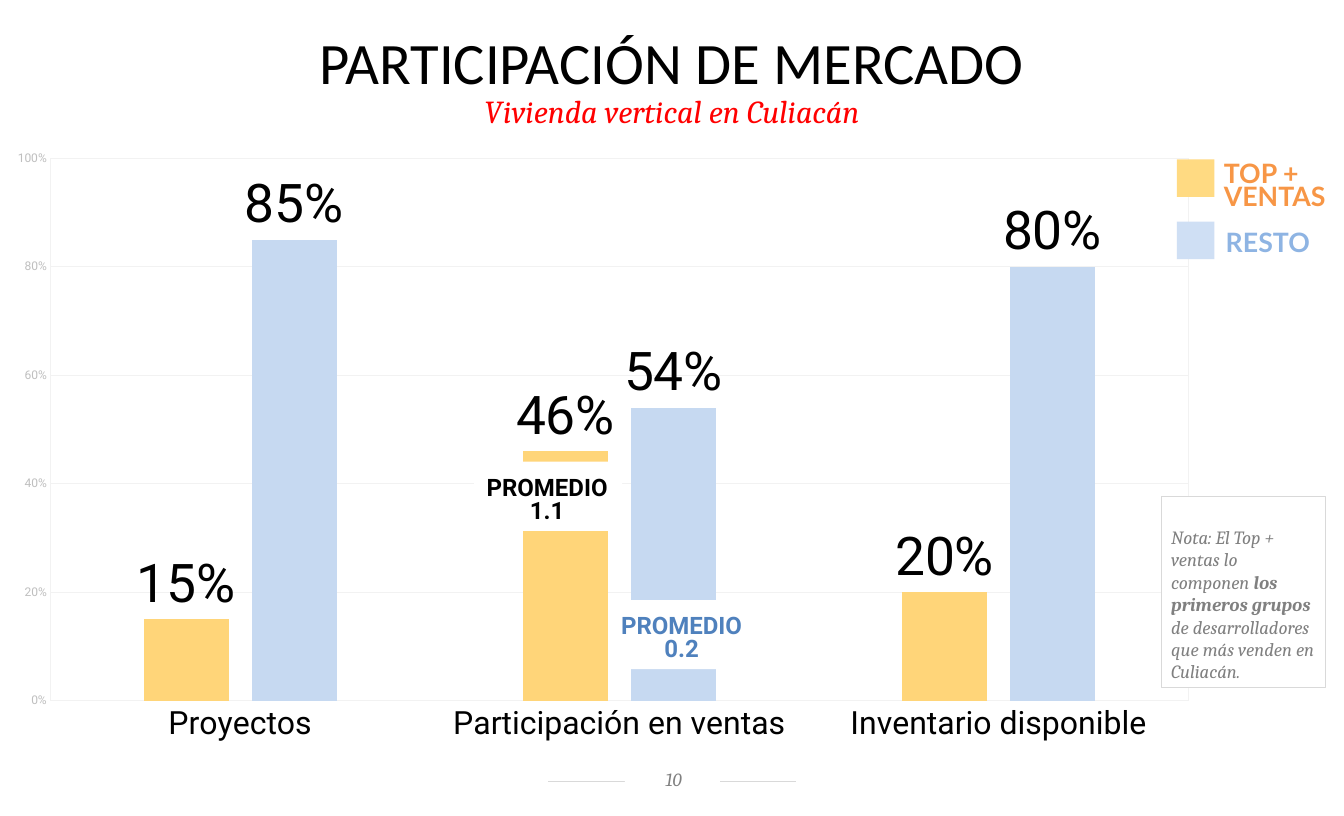
import lxml.etree
import pptx
import pptx.chart.data
import pptx.dml.color
import pptx.enum.chart
import pptx.enum.shapes
import pptx.enum.text
import pptx.oxml.ns
import pptx.util

Inches = pptx.util.Inches
Pt = pptx.util.Pt
RGBColor = pptx.dml.color.RGBColor
Align = pptx.enum.text.PP_ALIGN
Anchor = pptx.enum.text.MSO_ANCHOR
Shapes = pptx.enum.shapes.MSO_SHAPE
qn = pptx.oxml.ns.qn

BLACK = RGBColor(0x00, 0x00, 0x00)
WHITE = RGBColor(0xFF, 0xFF, 0xFF)
RED = RGBColor(0xFF, 0x00, 0x00)
GRAY = RGBColor(0x80, 0x80, 0x80)
AXIS_GRAY = RGBColor(0xBF, 0xBF, 0xBF)
LINE_GRAY = RGBColor(0xD9, 0xD9, 0xD9)
GRID_GRAY = RGBColor(0xF2, 0xF2, 0xF2)
TOP_BAR = RGBColor(0xFF, 0xD5, 0x79)
REST_BAR = RGBColor(0xC6, 0xD9, 0xF1)
TOP_KEY = RGBColor(0xFF, 0xDA, 0x82)
REST_KEY = RGBColor(0xCF, 0xDF, 0xF4)
TOP_TEXT = RGBColor(0xF7, 0x96, 0x46)
REST_TEXT = RGBColor(0x8E, 0xB4, 0xE3)
AVERAGE_BLUE = RGBColor(0x4F, 0x81, 0xBD)

LABEL_INSETS = (0.12, 0.16, 0.14, 0.07)
HEADING_INSETS = (0.13, 0.06, 0.13, 0.06)
DEFAULT_INSETS = (0.1, 0.05, 0.1, 0.05)


def format_font(font, name, size, color, bold=False, italic=False):
    font.name = name
    font.size = Pt(size)
    font.color.rgb = color
    font.bold = bold
    font.italic = italic


def write_text(paragraph, text, spacing=None, align=Align.LEFT, **font_format):
    paragraph.alignment = align
    if spacing:
        paragraph.line_spacing = spacing
    run = paragraph.add_run()
    run.text = text
    format_font(run.font, **font_format)


def set_frame(shape, anchor=Anchor.MIDDLE, insets=DEFAULT_INSETS):
    frame = shape.text_frame
    frame.word_wrap = True
    frame.auto_size = pptx.enum.text.MSO_AUTO_SIZE.NONE
    frame.vertical_anchor = anchor
    frame.margin_left, frame.margin_top, frame.margin_right, frame.margin_bottom = map(Inches, insets)
    return frame


def add_box(slide, position, fill=None, line=None, kind=Shapes.RECTANGLE):
    shape = slide.shapes.add_shape(kind, *map(Inches, position))
    shape.shadow.inherit = False
    if fill is None:
        shape.fill.background()
    else:
        shape.fill.solid()
        shape.fill.fore_color.rgb = fill
    if line is None:
        shape.line.fill.background()
    else:
        shape.line.color.rgb = line
        shape.line.width = Pt(0.75)
    return shape


def fill_heading(placeholder, text, position, **font_format):
    placeholder.left, placeholder.top, placeholder.width, placeholder.height = map(Inches, position)
    frame = set_frame(placeholder, Anchor.TOP, HEADING_INSETS)
    paragraph = frame.paragraphs[0]
    paragraph.space_before = Pt(0)
    write_text(paragraph, text, spacing=0.7, align=Align.CENTER, **font_format)


def add_page_number(slide, number):
    line = slide.shapes.add_connector(
        pptx.enum.shapes.MSO_CONNECTOR.STRAIGHT,
        Inches(5.71), Inches(8.14), Inches(8.29), Inches(8.14))
    line.line.color.rgb = LINE_GRAY
    line.line.width = Pt(0.75)
    lxml.etree.SubElement(line._element.spPr, qn("a:effectLst"))
    box = add_box(slide, (6.51, 7.98, 0.99, 0.29), WHITE)
    frame = set_frame(box, insets=(0.12, 0.02, 0.1, 0.05))
    write_text(frame.paragraphs[0], number, align=Align.CENTER,
               name="Cambria", size=14, color=GRAY, italic=True)


def format_line(line):
    line.color.rgb = GRID_GRAY
    line.width = Pt(0.75)


def frame_plot(chart):
    plot_area = chart._chartSpace.find(".//" + qn("c:plotArea"))
    layout = plot_area.find(qn("c:layout"))
    if layout is None:
        layout = lxml.etree.Element(qn("c:layout"))
        plot_area.insert(0, layout)
    manual = lxml.etree.SubElement(layout, qn("c:manualLayout"))
    settings = (("layoutTarget", "inner"), ("xMode", "edge"), ("yMode", "edge"),
                ("x", "0.047"), ("y", "0.031"), ("w", "0.933"), ("h", "0.88"))
    for tag, value in settings:
        lxml.etree.SubElement(manual, qn("c:" + tag), val=value)
    properties = lxml.etree.SubElement(plot_area, qn("c:spPr"))
    lxml.etree.SubElement(properties, qn("a:noFill"))
    border = lxml.etree.SubElement(properties, qn("a:ln"), w=str(Pt(0.75)))
    fill = lxml.etree.SubElement(border, qn("a:solidFill"))
    lxml.etree.SubElement(fill, qn("a:srgbClr"), val=str(GRID_GRAY))


def add_share_chart(slide):
    data = pptx.chart.data.CategoryChartData(number_format="0%")
    data.categories = ["Proyectos", "Participación en ventas", "Inventario disponible"]
    data.add_series("Series 1", (0.15, 0.46, 0.2))
    data.add_series("Series 2", (0.85, 0.54, 0.8))
    chart = slide.shapes.add_chart(
        pptx.enum.chart.XL_CHART_TYPE.COLUMN_CLUSTERED,
        Inches(-0.07), Inches(1.45), Inches(12.7), Inches(6.42), data).chart
    chart.has_legend = False
    chart.has_title = False
    format_font(chart.font, "Roboto", 10, BLACK)

    for axis, size, color in ((chart.category_axis, 24, BLACK), (chart.value_axis, 9, AXIS_GRAY)):
        axis.major_tick_mark = pptx.enum.chart.XL_TICK_MARK.NONE
        axis.minor_tick_mark = pptx.enum.chart.XL_TICK_MARK.NONE
        format_font(axis.tick_labels.font, "Roboto", size, color)
        format_line(axis.format.line)
    value_axis = chart.value_axis
    value_axis.minimum_scale = 0
    value_axis.maximum_scale = 1
    value_axis.major_unit = 0.2
    value_axis.tick_labels.number_format = "0%"
    value_axis.tick_labels.number_format_is_linked = False
    format_line(value_axis.major_gridlines.format.line)

    plot = chart.plots[0]
    plot.vary_by_categories = False
    plot.gap_width = 219
    plot.overlap = -27
    for series, color in zip(plot.series, (TOP_BAR, REST_BAR)):
        series.invert_if_negative = False
        series.format.fill.solid()
        series.format.fill.fore_color.rgb = color
        labels = series.data_labels
        labels.show_value = True
        labels.number_format = "0%"
        labels.number_format_is_linked = False
        labels.position = pptx.enum.chart.XL_LABEL_POSITION.OUTSIDE_END
        format_font(labels.font, "Roboto", 40, BLACK)
    frame_plot(chart)


def add_legend_entry(slide, text, key_top, key_color, position, color, spacing=None):
    label = add_box(slide, position, kind=Shapes.ROUNDED_RECTANGLE)
    label.adjustments[0] = 0
    write_text(set_frame(label).paragraphs[0], text, spacing=spacing,
               name="Lato", size=20, color=color, bold=True)
    add_box(slide, (12.26, key_top, 0.39, 0.39), key_color)


def add_average(slide, value, left, top, color):
    box = add_box(slide, (left, top, 1.54, 0.72), WHITE)
    frame = set_frame(box, insets=LABEL_INSETS)
    for paragraph, text in ((frame.paragraphs[0], "PROMEDIO"), (frame.add_paragraph(), value)):
        write_text(paragraph, text, spacing=0.8, align=Align.CENTER,
                   name="Roboto", size=18, color=color, bold=True)


def add_note(slide):
    box = add_box(slide, (12.1, 5.17, 1.71, 1.99), WHITE, LINE_GRAY)
    paragraph = set_frame(box, Anchor.BOTTOM).paragraphs[0]
    for text, bold in (("Nota: El Top + ventas lo componen ", False),
                       ("los primeros grupos ", True),
                       ("de desarrolladores que más venden en Culiacán.", False)):
        write_text(paragraph, text, name="Cambria", size=14, color=GRAY, bold=bold, italic=True)


def main():
    presentation = pptx.Presentation()
    presentation.slide_width = Inches(14)
    presentation.slide_height = Inches(8.5)
    slide = presentation.slides.add_slide(presentation.slide_layouts[0])
    fill_heading(slide.shapes.title, "PARTICIPACIÓN DE MERCADO", (0, 0.41, 14, 0.65),
                 name="Calibri", size=44, color=BLACK)
    fill_heading(slide.placeholders[1], "Vivienda vertical en Culiacán", (0, 1, 14, 0.42),
                 name="Cambria", size=24, color=RED, italic=True)
    add_share_chart(slide)
    add_page_number(slide, "10")
    add_legend_entry(slide, "TOP + VENTAS", 1.66, TOP_KEY, (12.65, 1.67, 1.35, 0.58), TOP_TEXT, 0.7)
    add_legend_entry(slide, "RESTO", 2.31, REST_KEY, (12.67, 2.3, 1.33, 0.44), REST_TEXT)
    add_average(slide, "1.1", 4.94, 4.81, BLACK)
    add_note(slide)
    add_average(slide, "0.2", 6.34, 6.25, AVERAGE_BLUE)
    presentation.save("out.pptx")


if __name__ == "__main__":
    main()
